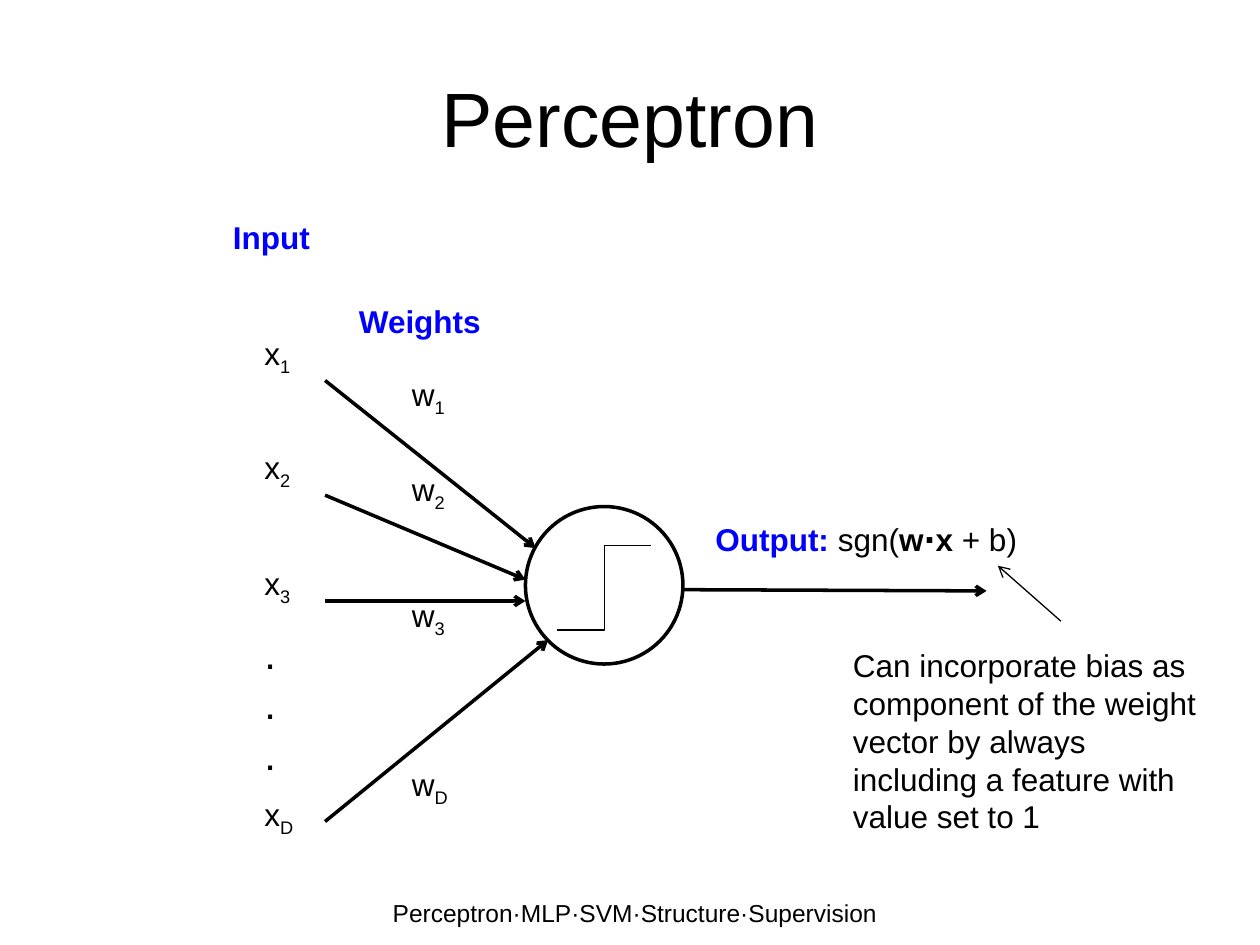
from lxml import etree
from pptx import Presentation
from pptx.dml.color import RGBColor
from pptx.enum.shapes import MSO_CONNECTOR as Connector, MSO_SHAPE as Preset
from pptx.enum.text import MSO_ANCHOR as Anchor, MSO_AUTO_SIZE as AutoSize, PP_ALIGN as Align
from pptx.oxml.ns import qn
from pptx.util import Inches, Pt

BLACK = "000000"
BLUE = "0000FF"


def color(hex_value):
    """Turn a hex string into a colour."""
    return RGBColor.from_string(hex_value)


def add_text(slide, box, paragraphs, size=18, align=Align.LEFT, anchor=Anchor.TOP,
             wrap=False, grow=True):
    """Place paragraphs, each a list of (text, format) runs, in a box."""
    label = slide.shapes.add_textbox(*map(Inches, box))
    frame = label.text_frame
    frame.word_wrap = wrap
    frame.auto_size = AutoSize.SHAPE_TO_FIT_TEXT if grow else AutoSize.NONE
    frame.vertical_anchor = anchor
    for index, runs in enumerate(paragraphs):
        paragraph = frame.paragraphs[0] if index == 0 else frame.add_paragraph()
        paragraph.alignment = align
        for text, style in runs:
            run = paragraph.add_run()
            run.text = text
            run.font.name = "Arial"
            run.font.size = Pt(size)
            run.font.bold = style.get("bold", False)
            run.font.color.rgb = color(style.get("fill", BLACK))
            if "baseline" in style:
                run.font._element.set("baseline", str(style["baseline"]))


def add_line(slide, start, end, width=2, kind=Connector.STRAIGHT, arrow=True):
    """Draw a black connector, with an open arrowhead at its end if wanted."""
    connector = slide.shapes.add_connector(kind, *map(Inches, (*start, *end)))
    connector.line.color.rgb = color(BLACK)
    connector.line.width = Pt(width)
    if arrow:
        etree.SubElement(connector.line._get_or_add_ln(), qn("a:tailEnd"), type="arrow")
    etree.SubElement(connector._element.spPr, qn("a:effectLst"))


def add_title(slide, box):
    """Write the slide title."""
    add_text(slide, box, [[("Perceptron", {})]], size=44, align=Align.CENTER,
             anchor=Anchor.MIDDLE, wrap=True, grow=False)


def add_footer(slide, box):
    """Write the row of topics at the foot of the slide."""
    topics = ("Perceptron", "MLP", "SVM", "Structure", "Supervision")
    add_text(slide, box, [[("·".join(topics), {})]], size=14, align=Align.CENTER,
             wrap=True, grow=False)


def add_neuron(slide, box):
    """Draw the circle with its step function."""
    left, top, width, height = box
    neuron = slide.shapes.add_shape(Preset.OVAL, *map(Inches, box))
    neuron.shadow.inherit = False
    neuron.fill.background()
    neuron.line.color.rgb = color(BLACK)
    neuron.line.width = Pt(2)
    add_line(slide, (left + 0.2 * width, top + 0.98), (left + 0.8 * width, top + 0.31),
             width=0.75, kind=Connector.ELBOW, arrow=False)


def add_inputs(slide, box):
    """Draw the inputs and their weighted arrows, which end at the right of the box."""
    left, top, width, height = box
    right = left + width
    heading = {"bold": True, "fill": BLUE}
    add_text(slide, (left, top, 0.82, 0.4), [[("Input", heading)]])
    add_text(slide, (left + 1, top + 0.67, 1.18, 0.4), [[("Weights", heading)]])
    rows = [
        ("1", 0.92, 1.25, 1.34, (right + 0.08, top + 2.67)),
        ("2", 1.83, 2, 2.25, (right, top + 2.92)),
        ("3", 2.75, 3, 3.09, (right, top + 3.09)),
        ("D", 4.58, 4.34, 4.84, (right + 0.18, top + 3.4)),
    ]
    for index, input_y, weight_y, arrow_y, tip in rows:
        add_line(slide, (left + 0.83, top + arrow_y), tip)
        subscript = (index, {"baseline": -25000})
        add_text(slide, (left + 0.25, top + input_y, 0.49, 0.4), [[("x", {}), subscript]])
        add_text(slide, (left + 1.42, top + weight_y, 0.55, 0.4), [[("w", {}), subscript]])
    add_text(slide, (left + 0.25, top + 3.25, 0.29, 1.31), [[(".", {})]] * 3, size=24)


def add_output(slide, box):
    """Draw the output arrow with its formula and the note about the bias."""
    left, top, width, height = box
    formula = [("Output: ", {"bold": True, "fill": BLUE}), ("sgn(", {}),
               ("w⋅x ", {"bold": True}), ("+ b)", {})]
    note = ("Can incorporate bias as component of the weight vector "
            "by always including a feature with value set to 1")
    add_line(slide, (left, top + 0.6), (left + 2.41, top + 0.61))
    add_text(slide, (left + 0.16, top, 2.6, 0.4), [formula])
    add_text(slide, (left + 1.25, top + 1, width - 1.25, height - 1), [[(note, {})]], wrap=True)
    add_line(slide, (left + 3, top + 0.85), (left + 2.5, top + 0.41), width=0.75)


def main():
    """Build the slide and save it."""
    deck = Presentation()
    deck.slide_width, deck.slide_height = Inches(10), Inches(7.5)
    slide = deck.slides.add_slide(deck.slide_layouts[6])
    add_footer(slide, (2.25, 7.08, 5.58, 0.42))
    add_title(slide, (0.5, 0.3, 9, 1.25))
    add_neuron(slide, (4.17, 4.02, 1.25, 1.25))
    add_inputs(slide, (1.75, 1.68, 2.42, 4.98))
    add_output(slide, (5.42, 4.08, 4.33, 2.62))
    deck.save("out.pptx")


if __name__ == "__main__":
    main()
